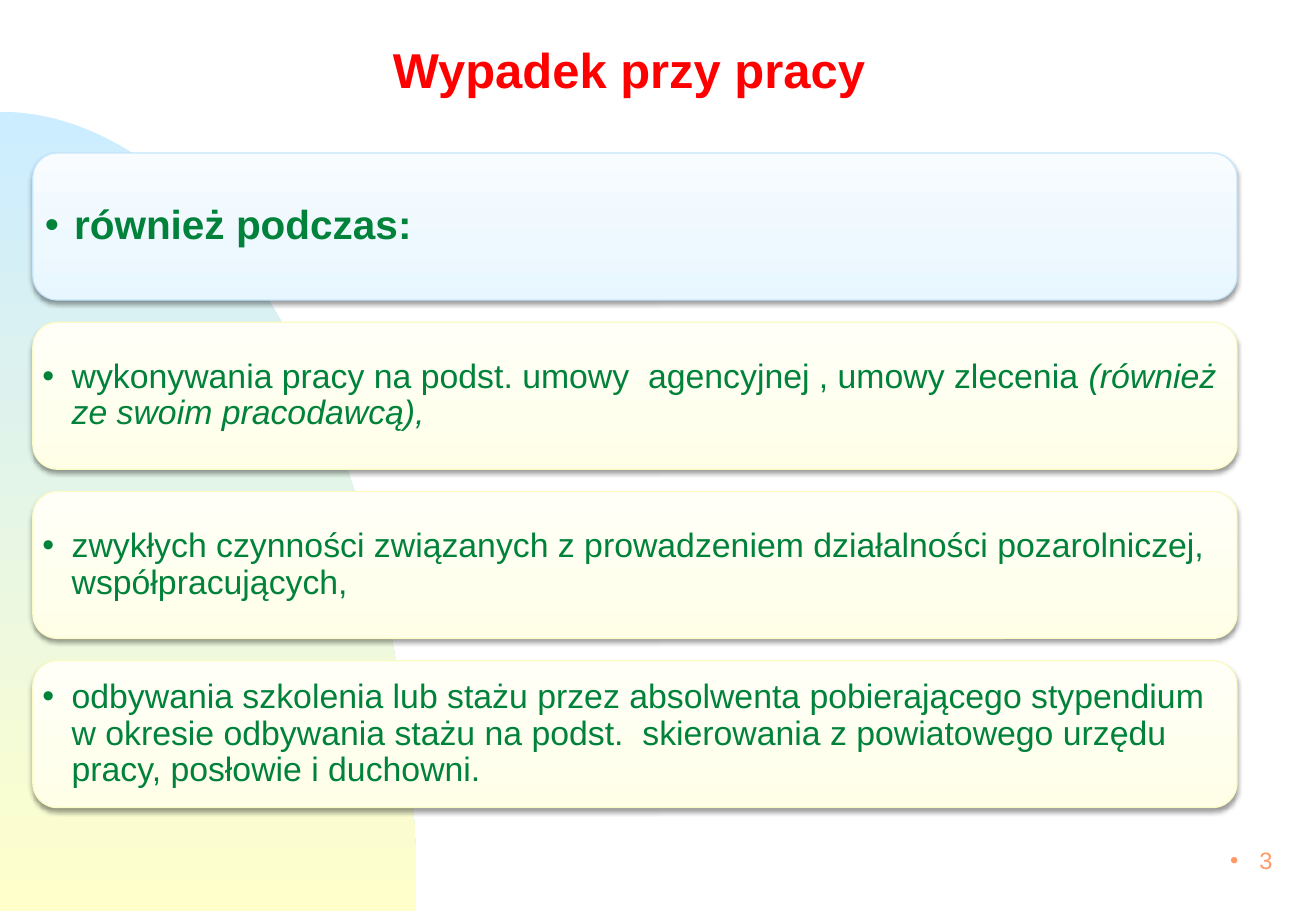
from math import cos, pi, sin

from lxml.etree import SubElement
from pptx import Presentation
from pptx.dml.color import RGBColor as RGB
from pptx.enum.shapes import MSO_SHAPE as SHAPE
from pptx.enum.text import MSO_ANCHOR as ANCHOR, PP_ALIGN as ALIGN
from pptx.oxml.ns import qn
from pptx.util import Inches, Pt


class Theme:
    font = "Arial"
    title = dict(size=29, bold=True, color="FF0000")
    lead = dict(size=24, bold=True, color="00823B")
    item = dict(size=20, color="00823B")
    number = dict(size=14, color="FF9966")
    backdrop = [(0, "CCECFF"), (100, "FFFFCC")]
    blue = [(0, "E7F6FF"), (35, "EEF8FF"), (100, "F8FCFF")]
    cream = [(0, "FFFFE7"), (35, "FFFFEE"), (100, "FFFFF8")]
    blue_line, cream_line = "C6E7FB", "FBFBC6"


WIDTH, HEIGHT = 10.83, 7.5
CARD_H, CARD_PITCH = 1.21, 1.393
LEAD = [("również podczas:", False)]
ITEMS = [
    [("wykonywania pracy na podst. umowy  agencyjnej , umowy zlecenia ", False),
     ("(również ze swoim pracodawcą),", True)],
    [("zwykłych czynności związanych z prowadzeniem działalności pozarolniczej, "
      "współpracujących,", False)],
    [("odbywania szkolenia lub stażu przez absolwenta pobierającego stypendium "
      "w okresie odbywania stażu na podst.  skierowania z powiatowego urzędu "
      "pracy, posłowie i duchowni.", False)],
]


def set_gradient(sp, stops, angle):
    sp.fill.gradient()
    sp.fill.gradient_angle = angle
    gs_list = sp._element.spPr.find(qn("a:gradFill")).find(qn("a:gsLst"))
    for gs in list(gs_list):
        gs_list.remove(gs)
    for pos, color in stops:
        gs = SubElement(gs_list, qn("a:gs"), pos=str(pos * 1000))
        SubElement(gs, qn("a:srgbClr"), val=color)


def set_shadow(sp):
    sp.shadow.inherit = False
    effects = sp._element.spPr.find(qn("a:effectLst"))
    shadow = SubElement(effects, qn("a:outerShdw"), blurRad=str(Pt(3.1)),
                        dist=str(Pt(1.6)), dir="5400000", rotWithShape="0")
    color = SubElement(shadow, qn("a:srgbClr"), val="000000")
    SubElement(color, qn("a:alpha"), val="38000")


def set_bullet(p, hang):
    pPr = p._p.get_or_add_pPr()
    pPr.set("marL", str(Inches(hang)))
    pPr.set("indent", str(-Inches(hang)))
    SubElement(pPr, qn("a:buFont"), typeface=Theme.font)
    SubElement(pPr, qn("a:buChar"), char="•")


def set_frame(tf, **values):
    tf.word_wrap = True
    tf.vertical_anchor = ANCHOR.MIDDLE
    for name, value in values.items():
        setattr(tf, "margin_" + name, Inches(value))


def add_run(p, text, style, italic=False):
    r = p.add_run()
    r.text = text
    values = dict(name=Theme.font, size=Pt(style["size"]),
                  bold=style.get("bold", False), italic=italic)
    for name, value in values.items():
        setattr(r.font, name, value)
    r.font.color.rgb = RGB.from_string(style["color"])


def add_backdrop(s, x, y, w, h, steps=60):
    """Quarter ellipse filling the lower left corner, behind everything."""
    angles = [pi / 2 * i / steps for i in range(1, steps + 1)]
    curve = [(Inches(x + w * sin(a)), Inches(y + h * (1 - cos(a)))) for a in angles]
    outline = s.shapes.build_freeform(Inches(x), Inches(y))
    outline.add_line_segments(curve + [(Inches(x), Inches(y + h))], close=True)
    sp = outline.convert_to_shape()
    set_gradient(sp, Theme.backdrop, 270)
    sp.line.fill.background()
    sp.shadow.inherit = False
    s.shapes._spTree.insert(2, sp._element)


def add_title(s, x, y, w, h):
    title = s.shapes.title
    title.left, title.top, title.width, title.height = map(Inches, (x, y, w, h))
    set_frame(title.text_frame)
    p = title.text_frame.paragraphs[0]
    p.alignment, p.line_spacing = ALIGN.CENTER, 0.7
    add_run(p, "Wypadek przy pracy ", Theme.title)


def add_card(s, x, y, w, h, parts, style, stops, line, inset):
    sp = s.shapes.add_shape(SHAPE.ROUNDED_RECTANGLE, *map(Inches, (x, y, w, h)))
    set_gradient(sp, stops, 90)
    sp.line.color.rgb = RGB.from_string(line)
    sp.line.width = Pt(0.75)
    set_shadow(sp)
    tf = sp.text_frame
    set_frame(tf, left=inset, top=inset, right=inset, bottom=inset)
    p = tf.paragraphs[0]
    p.alignment, p.line_spacing = ALIGN.LEFT, 0.9
    set_bullet(p, 0.24)
    for text, italic in parts:
        add_run(p, text, style, italic)


def add_cards(s, x, y, w):
    add_card(s, x, y, w, CARD_H, LEAD, Theme.lead, Theme.blue, Theme.blue_line, 0.04)
    for row, parts in enumerate(ITEMS, 1):
        add_card(s, x, y + row * CARD_PITCH, w, CARD_H, parts, Theme.item,
                 Theme.cream, Theme.cream_line, 0.02)


def add_number(s, x, y, w, h):
    tf = s.shapes.add_textbox(*map(Inches, (x, y, w, h))).text_frame
    set_frame(tf)
    p = tf.paragraphs[0]
    p.alignment = ALIGN.RIGHT
    set_bullet(p, 0.24)
    add_run(p, "3", Theme.number)


def main():
    prs = Presentation()
    prs.slide_width, prs.slide_height = Inches(WIDTH), Inches(HEIGHT)
    s = prs.slides.add_slide(prs.slide_layouts[5])
    add_backdrop(s, 0, 0.92, 3.43, HEIGHT - 0.92)
    add_title(s, 0, 0, 10.47, 1.25)
    add_cards(s, 0.27, 1.26, 9.91)
    add_number(s, 8.31, 6.83, 2.26, 0.5)
    prs.save("out.pptx")


if __name__ == "__main__":
    main()
